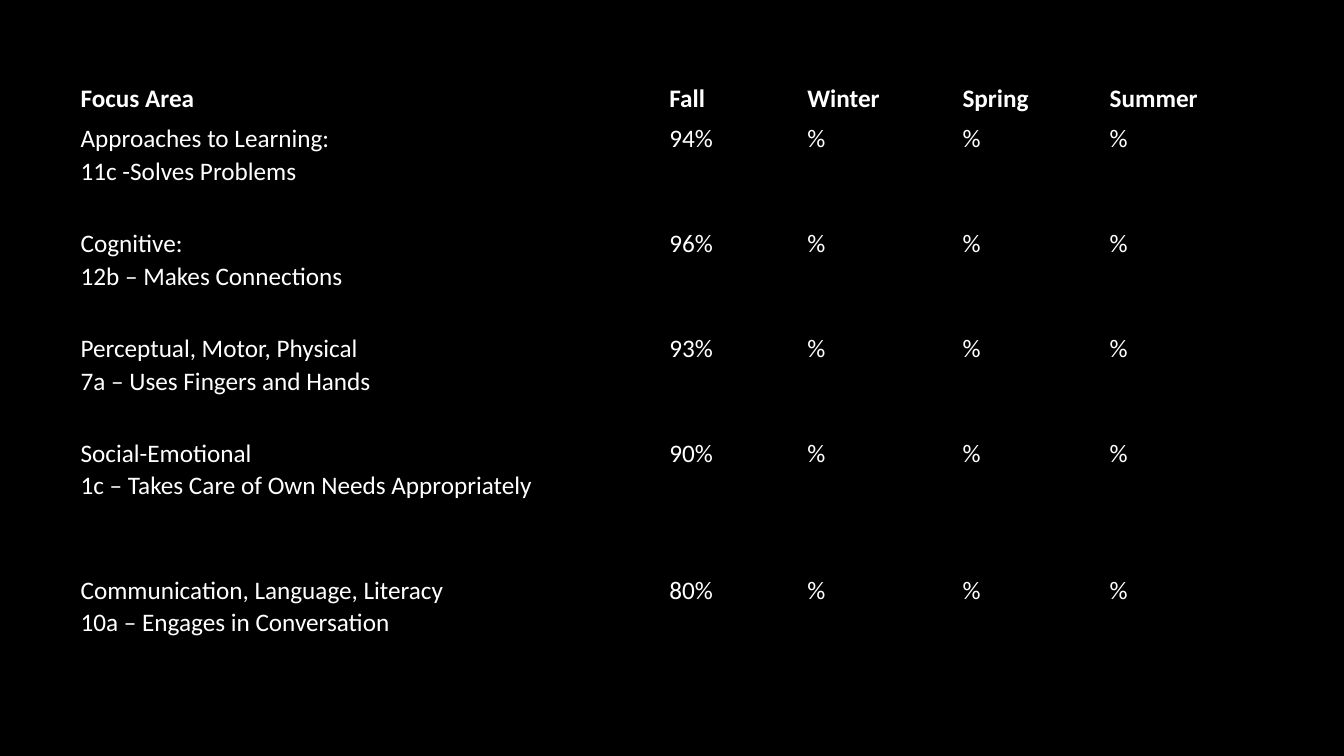
from dataclasses import dataclass

from lxml.etree import SubElement
from pptx import Presentation
from pptx.dml.color import RGBColor
from pptx.oxml.ns import qn
from pptx.util import Pt

HEADINGS = ("Focus Area", "Fall", "Winter", "Spring", "Summer")
FOCUS_AREAS = (
    ("Approaches to Learning:\n11c -Solves Problems", "94%"),
    ("Cognitive:\n12b – Makes Connections", "96%"),
    ("Perceptual, Motor, Physical\n7a – Uses Fingers and Hands", "93%"),
    ("Social-Emotional\n1c – Takes Care of Own Needs Appropriately", "90%"),
    ("Communication, Language, Literacy\n10a – Engages in Conversation", "80%"),
)
PENDING_SEASONS = ("%",) * 3

SLIDE_SIZE = (960, 540)
TABLE_ORIGIN = (50.4, 57.6)
COLUMN_WIDTHS = (420.5, 98.6, 110.9, 105.1, 124.6)
ROW_HEIGHTS = (28.4, 74.9, 74.9, 74.9, 97.9, 74.9)


@dataclass(frozen=True)
class Theme:
    background: str = "000000"
    text: str = "FFFFFF"
    border: str = "000000"
    border_width: float = 1
    font: str = "Calibri"
    size: float = 18
    line_spacing: float = 1.07
    side_margin: float = 7.2
    top_margin: float = 0.7


THEME = Theme()


def add_borders(cell):
    properties = cell._tc.get_or_add_tcPr()
    for side in ("a:lnL", "a:lnR", "a:lnT", "a:lnB"):
        line = SubElement(properties, qn(side), w=str(Pt(THEME.border_width)))
        fill = SubElement(line, qn("a:solidFill"))
        SubElement(fill, qn("a:srgbClr"), val=THEME.border)


def format_cell(cell, text, bold):
    add_borders(cell)
    cell.fill.background()
    cell.margin_left = cell.margin_right = Pt(THEME.side_margin)
    cell.margin_top = Pt(THEME.top_margin)
    cell.margin_bottom = Pt(0)
    cell.text_frame.text = text
    for paragraph in cell.text_frame.paragraphs:
        paragraph.line_spacing = THEME.line_spacing
        for run in paragraph.runs:
            run.font.name = THEME.font
            run.font.size = Pt(THEME.size)
            run.font.bold = bold
            run.font.color.rgb = RGBColor.from_string(THEME.text)


def add_focus_table(slide):
    rows = [HEADINGS] + [area + PENDING_SEASONS for area in FOCUS_AREAS]
    left, top = TABLE_ORIGIN
    table = slide.shapes.add_table(
        len(rows), len(HEADINGS), Pt(left), Pt(top),
        Pt(sum(COLUMN_WIDTHS)), Pt(sum(ROW_HEIGHTS)),
    ).table
    table.horz_banding = False
    for column, width in zip(table.columns, COLUMN_WIDTHS):
        column.width = Pt(width)
    for row_index, (row, height, texts) in enumerate(zip(table.rows, ROW_HEIGHTS, rows)):
        row.height = Pt(height)
        for cell, text in zip(row.cells, texts):
            format_cell(cell, text, bold=row_index == 0)


def main():
    presentation = Presentation()
    presentation.slide_width, presentation.slide_height = map(Pt, SLIDE_SIZE)
    slide = presentation.slides.add_slide(presentation.slide_layouts.get_by_name("Blank"))
    slide.background.fill.solid()
    slide.background.fill.fore_color.rgb = RGBColor.from_string(THEME.background)
    add_focus_table(slide)
    presentation.save("out.pptx")


if __name__ == "__main__":
    main()
